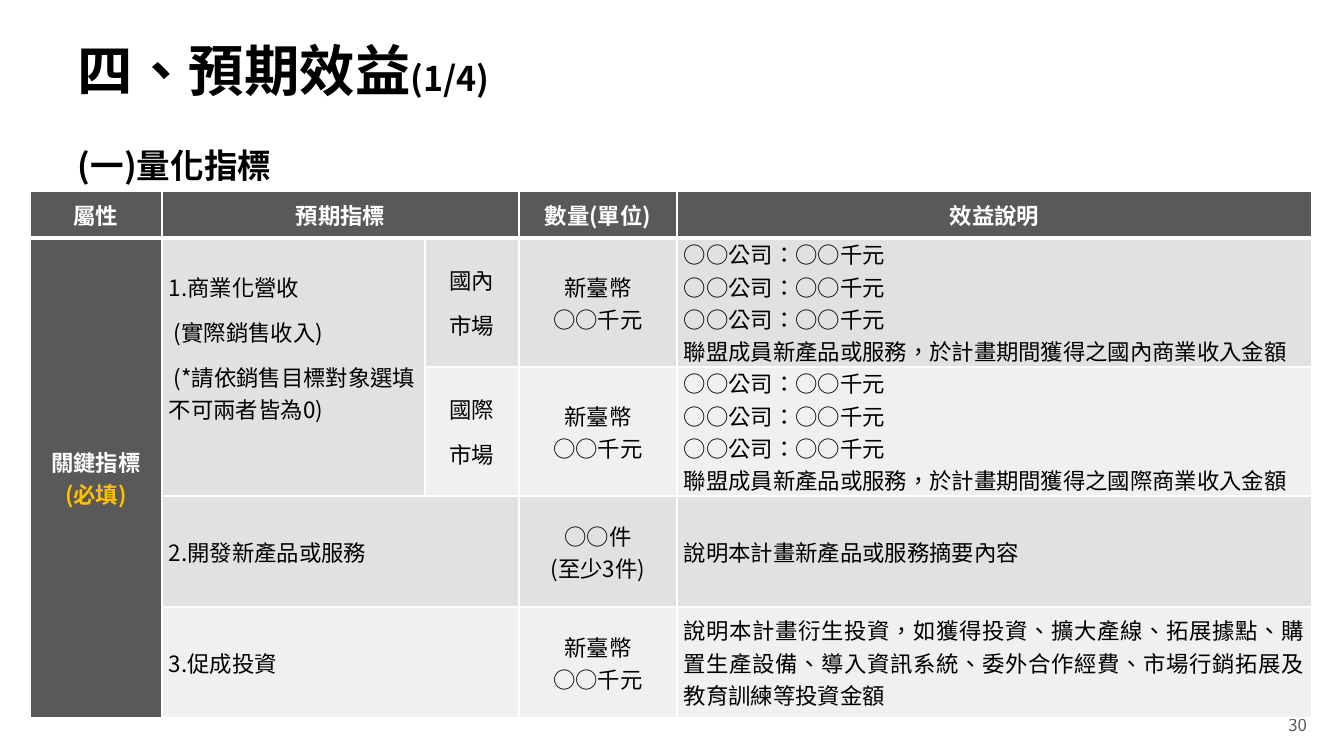
import pptx
import pptx.dml.color
import pptx.enum.text
import pptx.oxml
import pptx.oxml.ns
import pptx.util
from dataclasses import dataclass

ALIGN = pptx.enum.text.PP_ALIGN
MIDDLE = pptx.enum.text.MSO_ANCHOR.MIDDLE
TOP = pptx.enum.text.MSO_ANCHOR.TOP
PX_PER_INCH = 100.8


@dataclass(frozen=True)
class Theme:
    font: str = "Noto Sans CJK SC"
    ink: str = "000000"
    white: str = "FFFFFF"
    dark: str = "595959"
    accent: str = "FFC000"
    bands: tuple = ("E1E1E1", "F0F0F0")
    title: float = 39.6
    counter: float = 24.3
    subtitle: float = 24
    table: float = 16
    page: float = 12


THEME = Theme()
COLUMNS = (132, 263, 94, 158, 635)
ROWS = (47, 129, 129, 111, 111)
HEADINGS = {0: "屬性", 1: "預期指標", 3: "數量(單位)", 4: "效益說明"}
MERGES = (((0, 1), (0, 2)), ((1, 0), (4, 0)), ((1, 1), (2, 1)),
          ((3, 1), (3, 2)), ((4, 1), (4, 2)))
AMOUNT = ["新臺幣", "○○千元"]
COMPANIES = ["○○公司：○○千元"] * 3

# One entry per body row: indicator, market, quantity, explanation
INDICATORS = (
    (["1.商業化營收", " (實際銷售收入)", " (*請依銷售目標對象選填，不可兩者皆為0)"],
     ["國內", "市場"], AMOUNT,
     COMPANIES + ["聯盟成員新產品或服務，於計畫期間獲得之國內商業收入金額"]),
    (None, ["國際", "市場"], AMOUNT,
     COMPANIES + ["聯盟成員新產品或服務，於計畫期間獲得之國際商業收入金額"]),
    (["2.開發新產品或服務"], None, ["○○件", "(至少3件)"],
     ["說明本計畫新產品或服務摘要內容"]),
    (["3.促成投資"], None, AMOUNT,
     ["說明本計畫衍生投資，如獲得投資、擴大產線、拓展據點、購置生產設備、"
      "導入資訊系統、委外合作經費、市場行銷拓展及教育訓練等投資金額"]),
)
# Alignment and paragraph spacing of those four columns
COLUMN_FORMATS = (
    dict(align=ALIGN.LEFT, before=4.5, after=4.5),
    dict(align=ALIGN.CENTER, before=4.5, after=4.5),
    dict(align=ALIGN.CENTER),
    dict(align=ALIGN.JUSTIFY),
)


def px(length):
    return pptx.util.Emu(round(length * 914400 / PX_PER_INCH))


def rgb(color):
    return pptx.dml.color.RGBColor.from_string(color)


def write_run(paragraph, text, size, color=THEME.ink, bold=False):
    run = paragraph.add_run()
    run.text = text
    run.font.size = pptx.util.Pt(size)
    run.font.bold = bold
    run.font.name = THEME.font
    run.font.color.rgb = rgb(color)
    properties = run.font._element
    properties.set("lang", "zh-TW")
    properties.find(pptx.oxml.ns.qn("a:latin")).addnext(pptx.oxml.parse_xml(
        f'<a:ea {pptx.oxml.ns.nsdecls("a")} typeface="{THEME.font}"/>'))


def write_text(frame, lines, *, size, color=THEME.ink, bold=False,
               align=ALIGN.LEFT, before=0, after=0, spacing=None):
    """Each line is a string or a list of (text, run format) pairs."""
    for number, line in enumerate(lines):
        paragraph = frame.add_paragraph() if number else frame.paragraphs[0]
        paragraph.alignment = align
        paragraph.space_before = pptx.util.Pt(before)
        paragraph.space_after = pptx.util.Pt(after)
        if spacing:
            paragraph.line_spacing = spacing
        for text, changes in [(line, {})] if isinstance(line, str) else line:
            base = dict(size=size, color=color, bold=bold)
            write_run(paragraph, text, **{**base, **changes})


def add_text(slide, box, lines, anchor=TOP, **text_format):
    frame = slide.shapes.add_textbox(*map(px, box)).text_frame
    frame.word_wrap = True
    frame.vertical_anchor = anchor
    write_text(frame, lines, **text_format)


def style_cell(cell, row, column):
    is_header = row == 0
    is_dark = is_header or column == 0
    cell.fill.solid()
    cell.fill.fore_color.rgb = rgb(THEME.dark if is_dark else THEME.bands[(row - 1) % 2])
    cell.vertical_anchor = MIDDLE
    side, end = (5, 5) if is_dark else (7, 0)
    cell.margin_left = cell.margin_right = px(side)
    cell.margin_top = cell.margin_bottom = px(end)
    # White borders, thicker between header and body
    widths = dict(L=1, R=1, T=3 if row == 1 else 1, B=3 if is_header else 1)
    properties = cell._tc.get_or_add_tcPr()
    for position, (edge, points) in enumerate(widths.items()):
        properties.insert(position, pptx.oxml.parse_xml(
            f'<a:ln{edge} {pptx.oxml.ns.nsdecls("a")} w="{pptx.util.Pt(points)}">'
            f'<a:solidFill><a:srgbClr val="{THEME.white}"/></a:solidFill></a:ln{edge}>'))


def add_indicator_table(slide, left, top):
    table = slide.shapes.add_table(
        len(ROWS), len(COLUMNS), px(left), px(top), px(sum(COLUMNS)), px(sum(ROWS))).table
    for column, width in zip(table.columns, COLUMNS):
        column.width = px(width)
    for row, height in zip(table.rows, ROWS):
        row.height = px(height)
    for row in range(len(ROWS)):
        for column in range(len(COLUMNS)):
            style_cell(table.cell(row, column), row, column)
    for first, last in MERGES:
        table.cell(*first).merge(table.cell(*last))

    # Header row and attribute column
    label = dict(size=THEME.table, color=THEME.white, bold=True, align=ALIGN.CENTER)
    for column, heading in HEADINGS.items():
        write_text(table.cell(0, column).text_frame, [heading], **label)
    write_text(table.cell(1, 0).text_frame,
               ["關鍵指標", [("(必填)", dict(color=THEME.accent))]], **label)

    # Indicator rows; the revenue indicator sits above the middle of its cell
    for row, indicator in enumerate(INDICATORS, start=1):
        for column, (lines, layout) in enumerate(zip(indicator, COLUMN_FORMATS), start=1):
            if lines:
                write_text(table.cell(row, column).text_frame, lines,
                           size=THEME.table, **layout)
    table.cell(1, 1).margin_bottom = px(38)


def main():
    deck = pptx.Presentation()
    deck.slide_width, deck.slide_height = px(1344), px(756)
    slide = deck.slides.add_slide(deck.slide_layouts[6])

    # Page number
    add_text(slide, (1015, 713, 302, 24), ["30"], anchor=MIDDLE,
             size=THEME.page, color=THEME.dark, align=ALIGN.RIGHT)
    # Quantitative indicators
    add_indicator_table(slide, 30, 191)
    # Headings
    add_text(slide, (68, 37, 1210, 74),
             [[("四、預期效益", {}), ("(1/4)", dict(size=THEME.counter))]],
             anchor=MIDDLE, size=THEME.title, bold=True, spacing=0.9)
    add_text(slide, (68, 140, 1210, 45), ["(一)量化指標"],
             size=THEME.subtitle, bold=True, align=ALIGN.JUSTIFY, after=6)
    deck.save("out.pptx")


if __name__ == "__main__":
    main()
